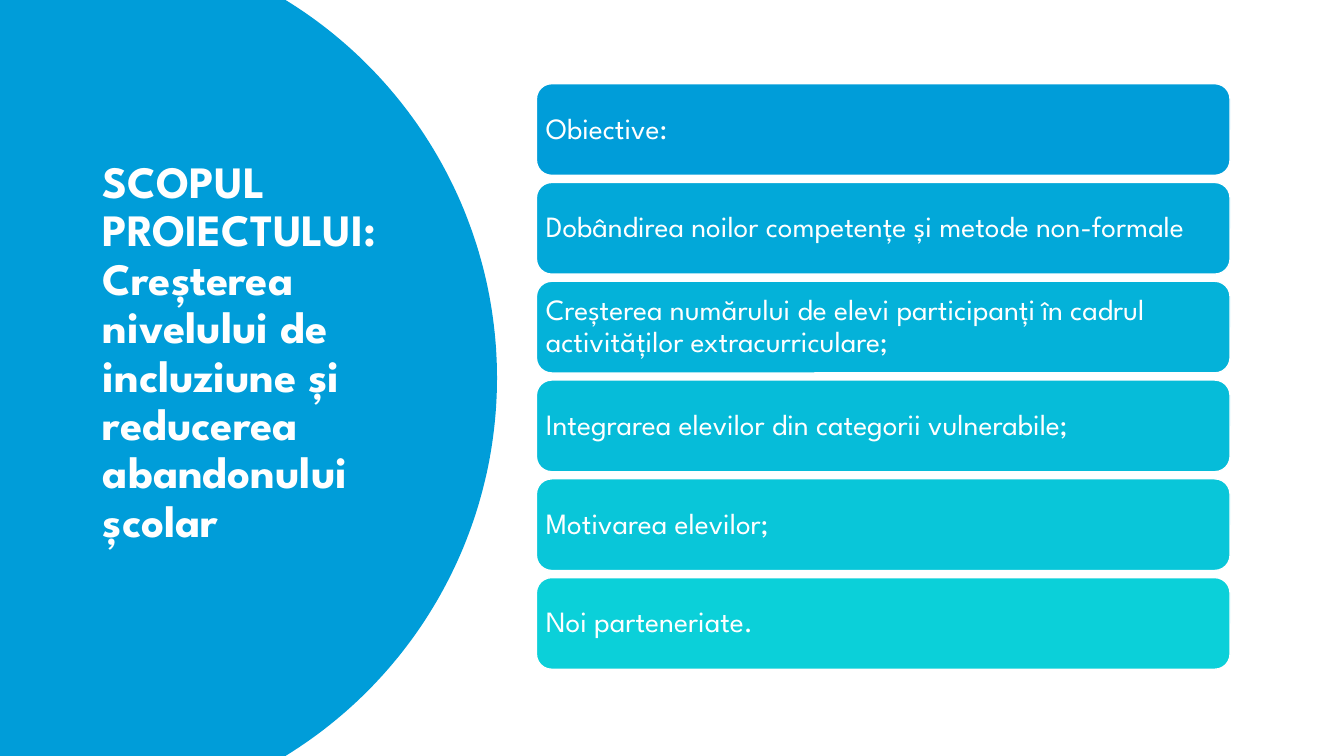
import math
from dataclasses import dataclass

import pptx
import pptx.dml.color
import pptx.enum.shapes
import pptx.enum.text
import pptx.util
from pptx.dml.color import RGBColor
from pptx.util import Inches

FONT = "League Spartan"
WHITE = RGBColor(0xFF, 0xFF, 0xFF)
BLUE = RGBColor(0x00, 0x9D, 0xD9)
AZURE = RGBColor(0x02, 0xA8, 0xD9)
CERULEAN = RGBColor(0x04, 0xB2, 0xD9)
CYAN = RGBColor(0x06, 0xBC, 0xD9)
TURQUOISE = RGBColor(0x09, 0xC6, 0xD9)
AQUA = RGBColor(0x0B, 0xD0, 0xD9)

SLIDE_WIDTH, SLIDE_HEIGHT = 13.33, 7.5
BAR_LEFT, BAR_TOP, BAR_WIDTH, BAR_HEIGHT = 5.32, 0.83, 6.88, 0.91
BAR_STEP = 0.98
ARC_CENTRE_X, ARC_RADIUS, ARC_SEGMENTS = 0.53, 4.4, 120


@dataclass(frozen=True)
class Objective:
    text: str
    colour: RGBColor


OBJECTIVES = [
    Objective("Obiective:", BLUE),
    Objective("Dobândirea noilor competențe și metode non-formale", AZURE),
    Objective("Creșterea numărului de elevi participanți în cadrul "
              "activităților extracurriculare;", CERULEAN),
    Objective("Integrarea elevilor din categorii vulnerabile;", CYAN),
    Objective("Motivarea elevilor;", TURQUOISE),
    Objective("Noi parteneriate.", AQUA),
]


def write_text(shape, text: str, *, size: float, bold: bool = False,
               side_inset: float = 0.1, bottom_inset: float = 0.05) -> None:
    """Fill a shape with one left-aligned, vertically centred paragraph."""
    frame = shape.text_frame
    frame.word_wrap = True
    frame.auto_size = pptx.enum.text.MSO_AUTO_SIZE.NONE
    frame.vertical_anchor = pptx.enum.text.MSO_ANCHOR.MIDDLE
    frame.margin_left = frame.margin_right = Inches(side_inset)
    frame.margin_top, frame.margin_bottom = Inches(0.05), Inches(bottom_inset)
    paragraph = frame.paragraphs[0]
    paragraph.alignment = pptx.enum.text.PP_ALIGN.LEFT
    paragraph.line_spacing = 0.9
    paragraph.space_before = pptx.util.Pt(0)
    run = paragraph.add_run()
    run.text = text
    run.font.name = FONT
    run.font.size = pptx.util.Pt(size)
    run.font.bold = bold
    run.font.color.rgb = WHITE


def draw_blue_panel(slide):
    """Draw the left panel, bounded by a circular arc on its right."""
    middle = SLIDE_HEIGHT / 2
    half_angle = math.asin(middle / ARC_RADIUS)
    angles = [half_angle * (2 * i / ARC_SEGMENTS - 1)
              for i in range(ARC_SEGMENTS + 1)]
    arc = [(Inches(ARC_CENTRE_X + ARC_RADIUS * math.cos(angle)),
            Inches(middle + ARC_RADIUS * math.sin(angle))) for angle in angles]
    builder = slide.shapes.build_freeform(0, 0)
    builder.add_line_segments(arc + [(0, Inches(SLIDE_HEIGHT))], close=True)
    panel = builder.convert_to_shape()
    panel.shadow.inherit = False
    panel.fill.solid()
    panel.fill.fore_color.rgb = BLUE
    panel.line.fill.background()
    return panel


def draw_objective(slide, objective: Objective, top: float) -> None:
    bar = slide.shapes.add_shape(
        pptx.enum.shapes.MSO_SHAPE.ROUNDED_RECTANGLE,
        Inches(BAR_LEFT), Inches(top), Inches(BAR_WIDTH), Inches(BAR_HEIGHT))
    bar.shadow.inherit = False
    bar.fill.solid()
    bar.fill.fore_color.rgb = objective.colour
    bar.line.color.rgb = WHITE
    bar.line.width = pptx.util.Pt(1)
    write_text(bar, objective.text, size=21, side_inset=0.05)


def main() -> None:
    presentation = pptx.Presentation()
    presentation.slide_width = Inches(SLIDE_WIDTH)
    presentation.slide_height = Inches(SLIDE_HEIGHT)
    title_only = presentation.slide_layouts[5]
    slide = presentation.slides.add_slide(title_only)

    # Project purpose, lifted in front of the blue panel
    panel = draw_blue_panel(slide)
    purpose = slide.shapes.title
    panel.element.addnext(purpose.element)
    purpose.left, purpose.top = Inches(0.92), Inches(0.7)
    purpose.width, purpose.height = Inches(3.23), Inches(6.09)
    write_text(purpose, "SCOPUL PROIECTULUI: Creșterea nivelului de incluziune "
               "și reducerea abandonului școlar",
               size=32, bold=True, bottom_inset=0.53)

    # Objectives
    for row, objective in enumerate(OBJECTIVES):
        draw_objective(slide, objective, BAR_TOP + row * BAR_STEP)

    presentation.save("out.pptx")


if __name__ == "__main__":
    main()
